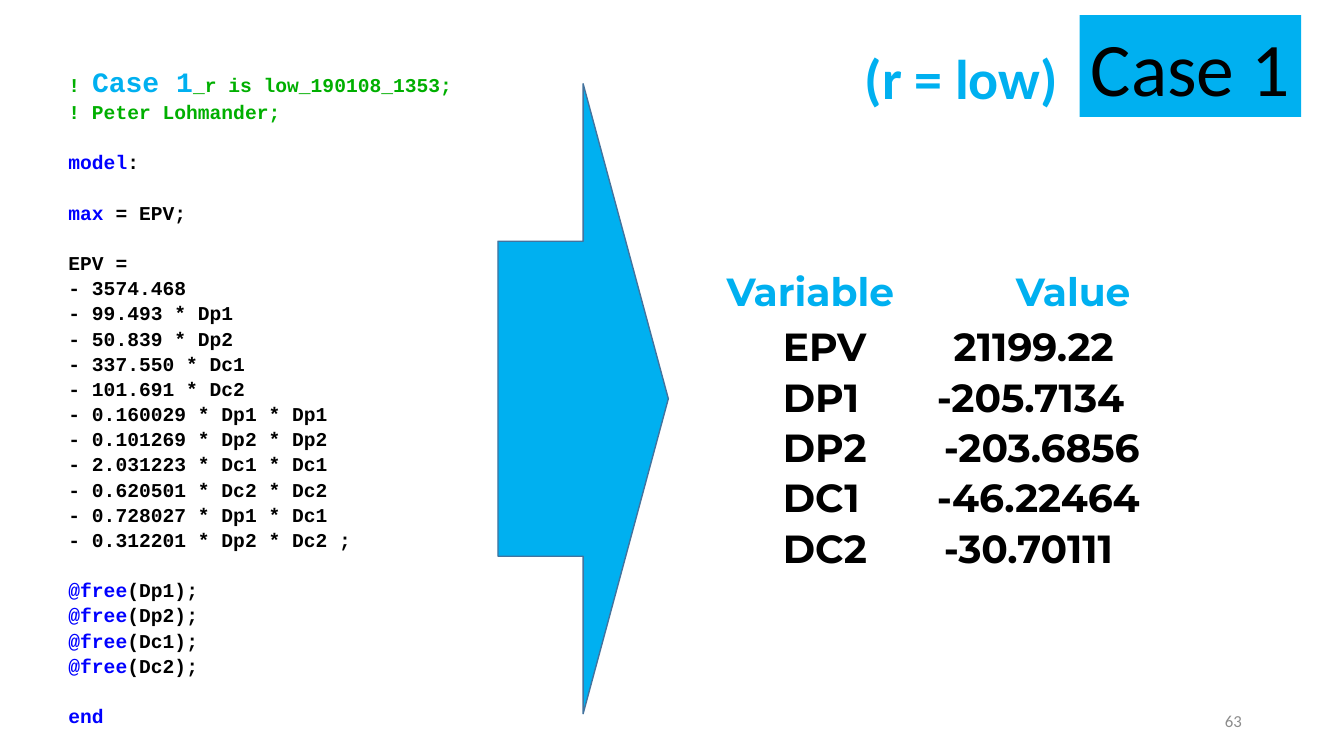
from pptx import Presentation
from pptx.dml.color import RGBColor
from pptx.enum import shapes, text
from pptx.oxml import ns
from pptx.util import Pt
from lxml import etree

# Content: each code line is a list of (text, style); blocks are set apart by a gap
CODE_BLOCKS = [
    [
        [("! ", "comment"), ("Case 1", "case"), ("_r is low_190108_1353;", "comment")],
        [("! Peter Lohmander;", "comment")],
    ],
    [[("model", "keyword"), (":", "ink")]],
    [[("max", "keyword"), (" = EPV;", "ink")]],
    [[(line, "ink")] for line in (
        "EPV =",
        "- 3574.468",
        "- 99.493 * Dp1",
        "- 50.839 * Dp2",
        "- 337.550 * Dc1",
        "- 101.691 * Dc2",
        "- 0.160029 * Dp1 * Dp1",
        "- 0.101269 * Dp2 * Dp2",
        "- 2.031223 * Dc1 * Dc1",
        "- 0.620501 * Dc2 * Dc2",
        "- 0.728027 * Dp1 * Dc1",
        "- 0.312201 * Dp2 * Dc2 ;",
    )],
    [[("@free", "keyword"), (f"({name});", "ink")] for name in ("Dp1", "Dp2", "Dc1", "Dc2")],
    [[("end", "keyword")]],
]
HEADER = [("Variable", "Value", 206.5)]
RESULTS = [  # variable, value, tab position of the value
    ("EPV", "21199.22", 122),
    ("DP1", "-205.7134", 110),
    ("DP2", "-203.6856", 115),
    ("DC1", "-46.22464", 110),
    ("DC2", "-30.70111", 115),
]

THEME = {
    "colors": {"accent": "00B0F0", "case": "00B0F0", "comment": "00AF00",
               "keyword": "0000FF", "ink": "000000", "outline": "43739E", "muted": "8C8C8C"},
    "sizes": {"title": 54, "subtitle": 40, "result": 28, "case": 20, "code": 14, "number": 12},
    "fonts": {"body": "Calibri", "code": "Courier New", "result": "Montserrat"},
    "line_spacing": 1.07,
    "block_gap": 18,
}


def color(name):
    return RGBColor.from_string(THEME["colors"][name])


def style(paragraph, face, size, ink=None, bold=False):
    font = paragraph.font
    font.name = THEME["fonts"][face]
    font.size = Pt(THEME["sizes"][size])
    font.bold = bold
    if ink:
        font.color.rgb = color(ink)


def add_box(left, top, width, height, wrap=True):
    box = slide.shapes.add_textbox(Pt(left), Pt(top), Pt(width), Pt(height))
    box.text_frame.word_wrap = wrap
    return box.text_frame


def add_filled(kind, left, top, width, height):
    shape = slide.shapes.add_shape(kind, Pt(left), Pt(top), Pt(width), Pt(height))
    shape.shadow.inherit = False
    shape.fill.solid()
    shape.fill.fore_color.rgb = color("accent")
    return shape


def next_paragraph(frame, index):
    return frame.add_paragraph() if index else frame.paragraphs[0]


def add_rows(frame, rows, ink):
    for index, (variable, value, position) in enumerate(rows):
        paragraph = next_paragraph(frame, index)
        paragraph.text = f"{variable}\t{value}"
        paragraph.line_spacing = THEME["line_spacing"]
        properties = paragraph._p.get_or_add_pPr()
        tabs = etree.SubElement(properties, ns.qn("a:tabLst"))
        etree.SubElement(tabs, ns.qn("a:tab"), pos=str(int(Pt(position))), algn="l")
        style(paragraph, "result", "result", ink, bold=True)


presentation = Presentation()
presentation.slide_width, presentation.slide_height = Pt(960), Pt(540)
slide = presentation.slides.add_slide(presentation.slide_layouts[6])

# Result header
add_rows(add_box(512, 185, 434, 80), HEADER, "accent")

# Arrow from code to results
arrow = add_filled(shapes.MSO_SHAPE.RIGHT_ARROW, 355.7, 59.8, 121.7, 450)
arrow.line.color.rgb = color("outline")
arrow.line.width = Pt(1)

# Case badge
badge = add_filled(shapes.MSO_SHAPE.RECTANGLE, 771.1, 10.8, 158.4, 72.7)
badge.line.fill.background()
badge.text_frame.word_wrap = False
title = badge.text_frame.paragraphs[0]
title.text = "Case 1"
title.alignment = text.PP_ALIGN.CENTER
style(title, "body", "title", "ink")

# Model code
code_frame = add_box(41.8, 41, 289, 492)
index = 0
for block in CODE_BLOCKS:
    for row, line in enumerate(block):
        paragraph = next_paragraph(code_frame, index)
        paragraph.line_spacing = THEME["line_spacing"]
        if index and row == 0:
            paragraph.space_before = Pt(THEME["block_gap"])
        style(paragraph, "code", "code", bold=True)
        for words, role in line:
            run = paragraph.add_run()
            run.text = words
            run.font.color.rgb = color(role)
            if role in THEME["sizes"]:
                run.font.size = Pt(THEME["sizes"][role])
        index += 1

# Result values
add_rows(add_box(552.2, 224.6, 381.6, 187), RESULTS, "ink")

# Subtitle
subtitle = add_box(610.6, 27.4, 154, 55.4, wrap=False).paragraphs[0]
subtitle.text = "(r = low)"
style(subtitle, "body", "subtitle", "accent", bold=True)

# Slide number
number_frame = add_box(678.2, 500.4, 216, 28.8)
number_frame.vertical_anchor = text.MSO_ANCHOR.MIDDLE
number = number_frame.paragraphs[0]
number.text = "63"
number.alignment = text.PP_ALIGN.RIGHT
style(number, "body", "number", "muted")

presentation.save("out.pptx")
